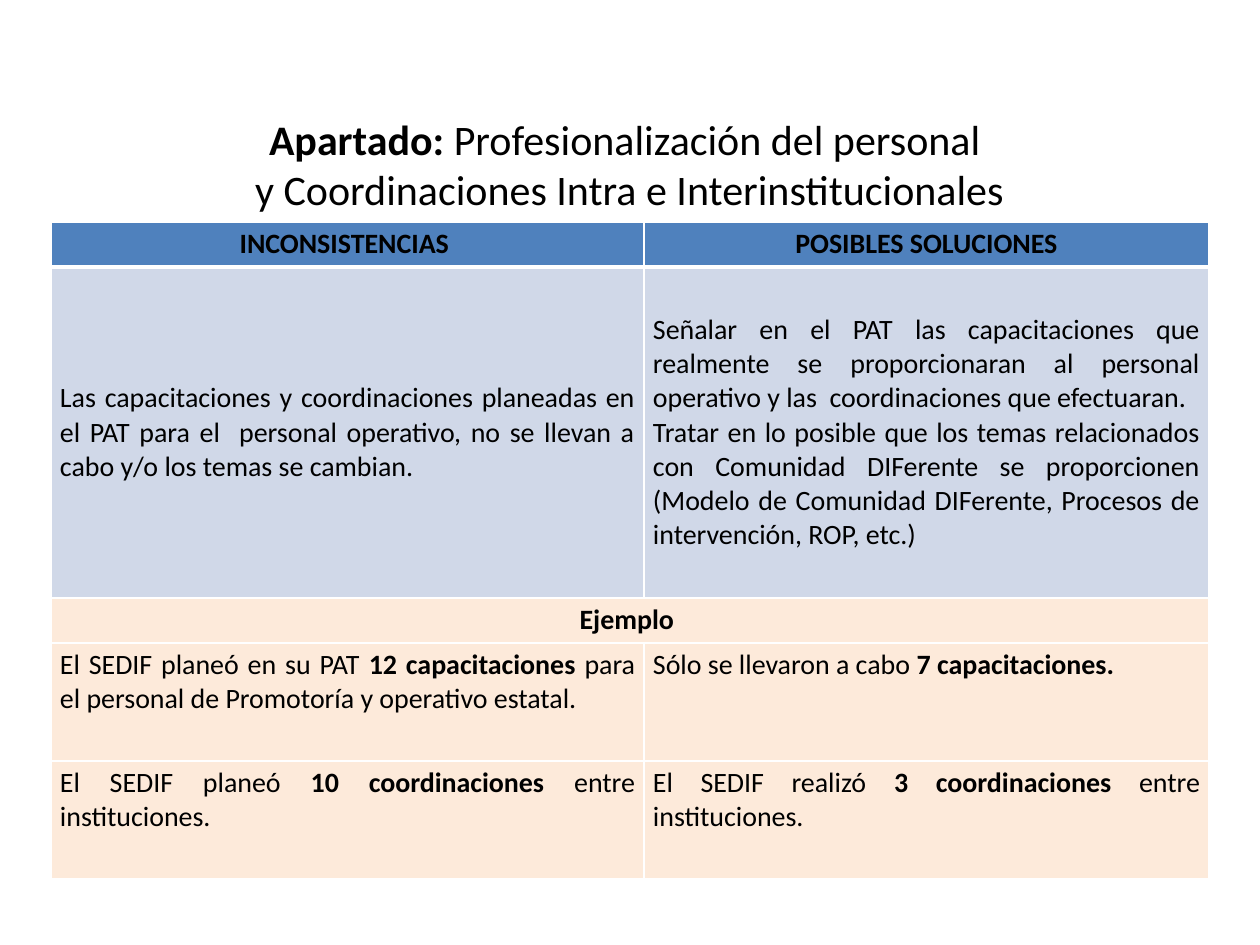
"""Build the slide on inconsistencies and possible solutions."""
from copy import deepcopy
from dataclasses import dataclass

from lxml.etree import SubElement
from pptx import Presentation
from pptx.dml.color import RGBColor
from pptx.enum.text import MSO_ANCHOR as Anchor, MSO_AUTO_SIZE as AutoSize, PP_ALIGN as Align
from pptx.oxml.ns import qn
from pptx.util import Emu, Pt

BLACK = RGBColor(0x00, 0x00, 0x00)
WHITE = RGBColor(0xFF, 0xFF, 0xFF)
BLUE = RGBColor(0x4F, 0x81, 0xBD)
PALE_BLUE = RGBColor(0xD0, 0xD8, 0xE8)
PEACH = RGBColor(0xFD, 0xEA, 0xDA)

EMU_PER_PX = 914400 / 126
TITLE = "**Apartado: **Profesionalización del personal \ny Coordinaciones Intra e Interinstitucionales"
COL_WIDTHS = (593, 565)


@dataclass(frozen=True)
class Row:
    """Texts and look of one table row; ** switches bold."""
    height: int
    fill: RGBColor
    texts: tuple[str, ...]
    align: Align = Align.JUSTIFY
    anchor: Anchor = Anchor.TOP
    bottom: int = 1


ROWS = (
    Row(45, BLUE, ("**INCONSISTENCIAS **", "**POSIBLES SOLUCIONES**"), Align.CENTER, bottom=3),
    Row(331, PALE_BLUE, (
        "Las capacitaciones y coordinaciones planeadas en el PAT para el  personal operativo, "
        "no se llevan a cabo y/o los temas se cambian.",
        "Señalar en el PAT las capacitaciones que realmente se proporcionaran al personal "
        "operativo y las  coordinaciones que efectuaran.\n"
        "Tratar en lo posible que los temas relacionados con Comunidad DIFerente se "
        "proporcionen (Modelo de Comunidad DIFerente, Procesos de intervención, ROP, etc.)",
    ), anchor=Anchor.MIDDLE),
    Row(45, PEACH, ("**Ejemplo **",), Align.CENTER),
    Row(118, PEACH, (
        "El SEDIF planeó en su PAT **12 capacitaciones **para el personal de Promotoría y operativo estatal.",
        "Sólo se llevaron a cabo **7 capacitaciones.**",
    )),
    Row(118, PEACH, (
        "El SEDIF planeó **10 coordinaciones **entre instituciones.",
        "El SEDIF realizó **3 coordinaciones **entre instituciones.",
    )),
)


def px(n: int) -> Emu:
    """Turn pixels into EMU."""
    return Emu(round(n * EMU_PER_PX))


def set_all(obj, values: dict) -> None:
    """Set each named attribute on the object."""
    for name, value in values.items():
        setattr(obj, name, value)


def add_runs(p, text: str, size: int, align: Align) -> None:
    """Fill a paragraph with plain and bold runs and line breaks."""
    p.alignment = align
    for i, part in enumerate(text.split("**")):
        for j, line in enumerate(part.split("\n")):
            if j:
                p.add_line_break()
                p._p[-1].append(deepcopy(r._r.rPr))
            if line:
                r = p.add_run()
                r.text = line
                set_all(r.font, {"name": "Calibri", "size": Pt(size), "bold": i % 2 == 1})
                r.font.color.rgb = BLACK


def add_borders(cell, bottom: int) -> None:
    """Draw white cell edges, one point wide but for the bottom."""
    tc_pr = cell._tc.get_or_add_tcPr()
    for side, width in {"L": 1, "R": 1, "T": 1, "B": bottom}.items():
        ln = SubElement(tc_pr, qn(f"a:ln{side}"), w=str(Pt(width)))
        SubElement(SubElement(ln, qn("a:solidFill")), qn("a:srgbClr"), val=str(WHITE))


def format_cell(cell, row: Row, text: str) -> None:
    """Style a cell and write its paragraphs."""
    add_borders(cell, row.bottom)
    cell.fill.solid()
    cell.fill.fore_color.rgb = row.fill
    set_all(cell, {
        "margin_left": px(9), "margin_right": px(9),
        "margin_top": px(5), "margin_bottom": px(5),
        "vertical_anchor": row.anchor,
    })
    tf = cell.text_frame
    for i, line in enumerate(text.split("\n")):
        p = tf.add_paragraph() if i else tf.paragraphs[0]
        add_runs(p, line, 16, row.align)


def add_title(s) -> None:
    """Place and write the title."""
    sp = s.shapes.title
    set_all(sp, {"left": px(79), "top": px(107), "width": px(1101), "height": px(115)})
    tf = sp.text_frame
    set_all(tf, {
        "word_wrap": True, "vertical_anchor": Anchor.TOP,
        "auto_size": AutoSize.SHAPE_TO_FIT_TEXT,
    })
    add_runs(tf.paragraphs[0], TITLE, 24, Align.CENTER)


def add_comparison(s) -> None:
    """Add the table of inconsistencies and solutions."""
    height = sum(row.height for row in ROWS)
    table = s.shapes.add_table(
        len(ROWS), len(COL_WIDTHS), px(51), px(222), px(sum(COL_WIDTHS)), px(height)).table
    for col, width in zip(table.columns, COL_WIDTHS):
        col.width = px(width)
    for i, row in enumerate(ROWS):
        table.rows[i].height = px(row.height)
        if len(row.texts) == 1:
            table.cell(i, 0).merge(table.cell(i, len(COL_WIDTHS) - 1))
        for j, text in enumerate(row.texts):
            format_cell(table.cell(i, j), row, text)


def main() -> None:
    """Build and save the presentation."""
    prs = Presentation()
    set_all(prs, {"slide_width": px(1260), "slide_height": px(945)})
    s = prs.slides.add_slide(prs.slide_layouts[5])
    add_title(s)
    add_comparison(s)
    prs.save("out.pptx")


if __name__ == "__main__":
    main()
